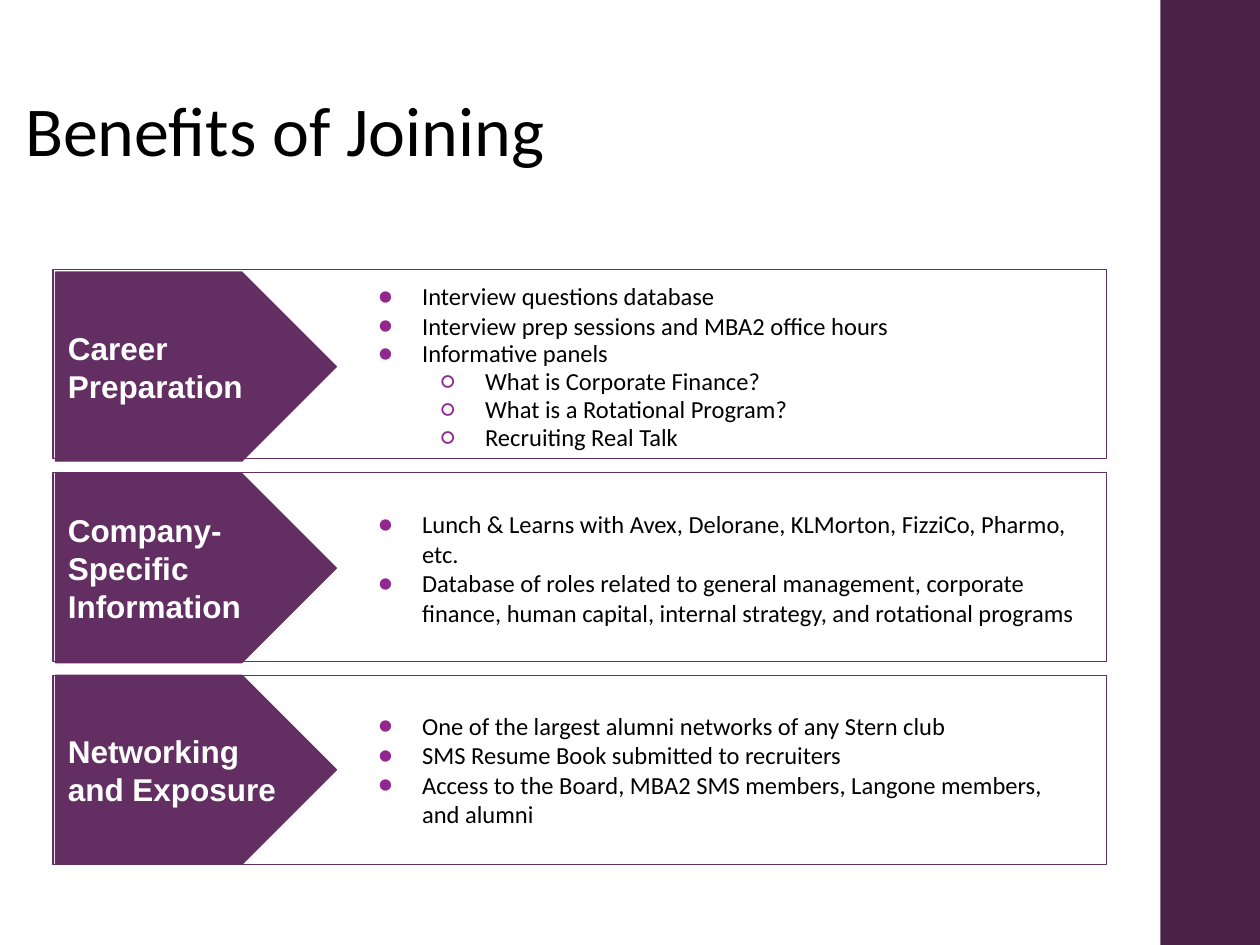
from typing import NamedTuple

from lxml import etree
from pptx import Presentation
from pptx.dml import color as dml
from pptx.enum import shapes, text
from pptx.oxml import ns
from pptx.util import Inches, Pt

HUES = {"band": "4A2249", "plum": "632E62", "dot": "92278F",
        "white": "FFFFFF", "black": "000000"}


class Item(NamedTuple):
    words: str
    level: int = 0
    gap: float = 1.0


class Row(NamedTuple):
    label: str
    items: list[Item]


ROWS = [
    Row("Career Preparation", [
        Item("Interview questions database"),
        Item("Interview prep sessions and MBA2 office hours"),
        Item("Informative panels", 0, 0.95),
        Item("What is Corporate Finance?", 1, 0.95),
        Item("What is a Rotational Program?", 1, 0.95),
        Item("Recruiting Real Talk", 1, 0.95)]),
    Row("Company- Specific Information", [
        Item("Lunch & Learns with Avex, Delorane, KLMorton, FizziCo, Pharmo, etc."),
        Item("Database of roles related to general management, corporate "
             "finance, human capital, internal strategy, and rotational programs")]),
    Row("Networking and Exposure", [
        Item("One of the largest alumni networks of any Stern club"),
        Item("SMS Resume Book submitted to recruiters"),
        Item("Access to the Board, MBA2 SMS members, Langone members, and alumni")]),
]


def hue(name: str) -> dml.RGBColor:
    return dml.RGBColor.from_string(HUES[name])


def place(shape, left: float, top: float, width: float, height: float) -> None:
    shape.left, shape.top = Inches(left), Inches(top)
    shape.width, shape.height = Inches(width), Inches(height)


def draw(slide, kind, box: tuple, fill: str, line: str | None = None):
    shape = slide.shapes.add_shape(kind, *map(Inches, box))
    shape.shadow.inherit = False
    shape.fill.solid()
    shape.fill.fore_color.rgb = hue(fill)
    if line:
        shape.line.color.rgb = hue(line)
        shape.line.width = Pt(0.75)
    else:
        shape.line.fill.background()
    return shape


def set_frame(shape, anchor, pad: float = 0.1):
    frame = shape.text_frame
    frame.word_wrap = True
    frame.auto_size = text.MSO_AUTO_SIZE.NONE
    frame.vertical_anchor = anchor
    frame.margin_left = frame.margin_right = Inches(0.1)
    frame.margin_top = frame.margin_bottom = Inches(pad)
    return frame


def write(para, words: str, size: int, face: str, tint: str, bold: bool = False) -> None:
    para.alignment = text.PP_ALIGN.LEFT
    para.space_before = Pt(0)
    run = para.add_run()
    run.text = words
    font = run.font
    font.size, font.name, font.bold = Pt(size), face, bold
    font.color.rgb = hue(tint)


def add_dot(para, level: int) -> None:
    props = para._p.get_or_add_pPr()
    props.set("marL", str(Inches(0.5 * (level + 1))))
    props.set("indent", str(Inches(-0.35)))
    tint = etree.SubElement(props, ns.qn("a:buClr"))
    etree.SubElement(tint, ns.qn("a:srgbClr"), val=HUES["dot"])
    etree.SubElement(props, ns.qn("a:buFont"), typeface="Calibri")
    etree.SubElement(props, ns.qn("a:buChar"), char="●○"[level])


def fill_list(body, items: list[Item]) -> None:
    frame = set_frame(body, text.MSO_ANCHOR.MIDDLE)
    for i, item in enumerate(items):
        para = frame.add_paragraph() if i else frame.paragraphs[0]
        para.level = item.level
        para.line_spacing = item.gap
        add_dot(para, item.level)
        write(para, item.words, 14, "Calibri", "black")


def main() -> None:
    deck = Presentation()
    deck.slide_width, deck.slide_height = Inches(10), Inches(7.5)
    slide = deck.slides.add_slide(deck.slide_layouts[4])
    title, *bodies, spare = slide.placeholders
    spare._element.getparent().remove(spare._element)
    kinds = shapes.MSO_SHAPE

    # Side band and title
    draw(slide, kinds.RECTANGLE, (9.21, 0, 0.8, 7.5), "band")
    place(title, 0.1, 0.06, 6.9, 1.35)
    head = set_frame(title, text.MSO_ANCHOR.BOTTOM, 0.05).paragraphs[0]
    head.line_spacing = 0.9
    write(head, "Benefits of Joining", 40, "Calibri", "black")

    # Cards
    for i in range(len(ROWS)):
        draw(slide, kinds.RECTANGLE, (0.42, 2.14 + 1.61 * i, 8.36, 1.5), "white", "plum")

    # Arrow labels and lists
    for i, (row, body) in enumerate(zip(ROWS, bodies)):
        top = 2.16 + 1.6 * i
        arrow = draw(slide, kinds.PENTAGON, (0.44, top, 2.23, 1.5), "plum", "plum")
        label = set_frame(arrow, text.MSO_ANCHOR.MIDDLE).paragraphs[0]
        write(label, row.label, 18, "Arial", "white", True)
        place(body, 2.75, top, 5.96, 1.5)
        fill_list(body, row.items)
        slide.shapes._spTree.append(body._element)  # in front of its card

    deck.save("out.pptx")


if __name__ == "__main__":
    main()
